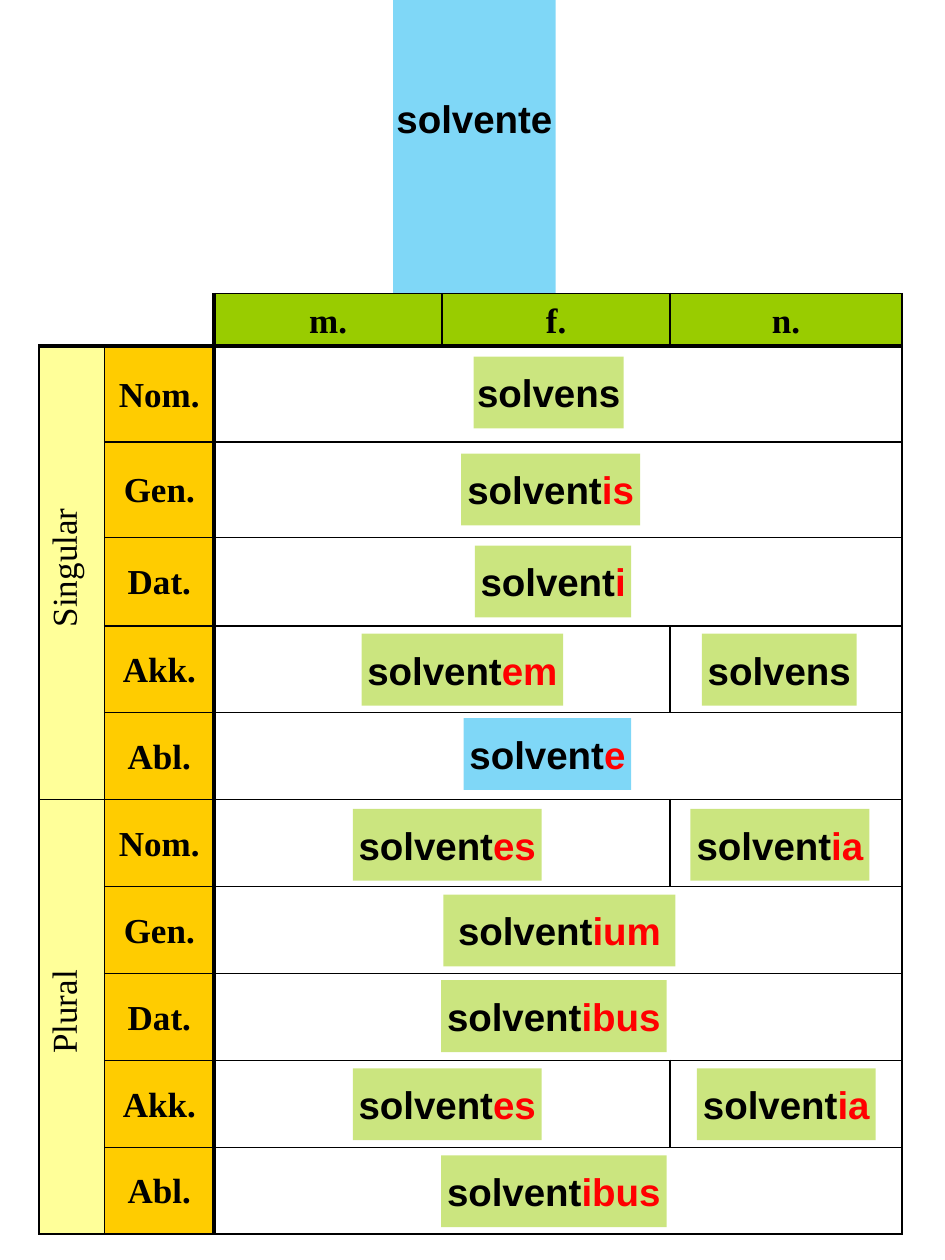
import pptx
import pptx.util
import pptx.dml.color
import pptx.enum.shapes
import pptx.enum.text
import pptx.oxml
import pptx.oxml.ns
from lxml import etree

IN = pptx.util.Inches
qn = pptx.oxml.ns.qn
CENTER = pptx.enum.text.PP_ALIGN.CENTER
MIDDLE = pptx.enum.text.MSO_ANCHOR.MIDDLE
BLUE, GREEN, RED, BLACK = "00B0F0", "99CC00", "FF0000", "000000"


def paint(target, color, alpha=None):
    """Give a fill or a font a solid colour, optionally see-through."""
    fill = target.fill
    fill.solid()
    fill.fore_color.rgb = pptx.dml.color.RGBColor.from_string(color)
    if alpha:
        clr = target._element.spPr.find(qn("a:solidFill"))[0]
        etree.SubElement(clr, qn("a:alpha"), val=str(alpha * 1000))


def write(tf, parts, size, font, bold, line=None):
    """Write (text, colour) parts as one centred paragraph."""
    p = tf.paragraphs[0]
    p.alignment = CENTER
    if line:
        p.line_spacing = line
    for text, color in parts:
        r = p.add_run()
        r.text = text
        for key, value in {"size": pptx.util.Pt(size), "name": font, "bold": bold}.items():
            setattr(r.font, key, value)
        paint(r.font, color)
    return p


prs = pptx.Presentation()
prs.slide_width, prs.slide_height = IN(7.5), IN(10)
s = prs.slides.add_slide(prs.slide_layouts[5])

# Table grid
left, top = 0.31, 2.33
cols = [0.52, 0.87, 1.81, 1.81, 1.84]
rows = [0.4, 0.76, 0.76, 0.7] + [0.69] * 7
frame = s.shapes.add_table(len(rows), len(cols), IN(left), IN(top),
                           IN(sum(cols)), IN(sum(rows)))
tbl = frame.table
tbl.first_row = tbl.horz_banding = False
tbl._tbl.tblPr.find(qn("a:tableStyleId")).text = "{2D5ABB26-0587-4C30-8999-92F81FD0307C}"
for col, width in zip(tbl.columns, cols):
    col.width = IN(width)
for row, height in zip(tbl.rows, rows):
    row.height = IN(height)

# Merged cells: neuter stands apart in Akk. singular, Nom. and Akk. plural
tbl.cell(0, 0).merge(tbl.cell(0, 1))
for r in (1, 6):
    tbl.cell(r, 0).merge(tbl.cell(r + 4, 0))
for r in range(1, 11):
    tbl.cell(r, 2).merge(tbl.cell(r, 3 if r in (4, 6, 9) else 4))

# Labels: (row, column) -> text, fill
labels = {(0, 2 + i): (t, GREEN) for i, t in enumerate(["m.", "f.", "n."])}
labels |= {(1 + i, 1): (t, "FFCC00")
           for i, t in enumerate(["Nom.", "Gen.", "Dat.", "Akk.", "Abl."] * 2)}
labels |= {(1, 0): ("Singular", "FFFF99"), (6, 0): ("Plural", "FFFF99")}

# Borders, fills and label text
for r in range(len(rows)):
    for c in range(len(cols)):
        cell = tbl.cell(r, c)
        if cell.is_spanned:
            continue
        corner = (r, c) == (0, 0)
        heavy = {"L": c == 2, "R": c == 1 or corner, "T": r == 1, "B": r == 0}
        tcPr = cell._tc.get_or_add_tcPr()
        for side in "RB" if corner else "LRTB":
            ln = etree.SubElement(tcPr, qn("a:ln" + side),
                                  w=str(pptx.util.Pt(2.25 if heavy[side] else 1)))
            fill = etree.SubElement(ln, qn("a:solidFill"))
            etree.SubElement(fill, qn("a:srgbClr"), val=BLACK)
        if (r, c) not in labels:
            cell.fill.background()
            continue
        text, color = labels[r, c]
        paint(cell, color)
        for key, value in {"vertical_anchor": MIDDLE, "margin_left": IN(0.06),
                           "margin_right": IN(0.06), "margin_top": IN(0.03),
                           "margin_bottom": IN(0.03)}.items():
            setattr(cell, key, value)
        p = write(cell.text_frame, [(text, BLACK)], 20, "Times New Roman", c > 0, 1.07)
        if c == 0:
            tcPr.set("vert", "vert270")
            p._p.get_or_add_pPr().set("marL", str(IN(0.08)))

# Word boxes: row (None for the title), offset in row, left, width, stem, ending, fill
words = [
    (None, 0.65, 3.12, 1.29, "solvente", "", BLUE),
    (5, 0.06, 3.68, 1.33, "solvent", "e", BLUE),
    (6, 0.09, 2.8, 1.5, "solvent", "es", GREEN),
    (2, 0.11, 3.66, 1.42, "solvent", "is", GREEN),
    (3, 0.08, 3.77, 1.24, "solvent", "i", GREEN),
    (1, 0.1, 3.76, 1.19, "solvens", "", GREEN),
    (4, 0.08, 5.57, 1.23, "solvens", "", GREEN),
    (9, 0.08, 2.8, 1.5, "solvent", "es", GREEN),
    (7, 0.08, 3.52, 1.84, "solvent", "ium", GREEN),
    (4, 0.08, 2.87, 1.6, "solvent", "em", GREEN),
    (6, 0.09, 5.48, 1.42, "solvent", "ia", GREEN),
    (9, 0.08, 5.53, 1.42, "solvent", "ia", GREEN),
    (8, 0.07, 3.5, 1.79, "solvent", "ibus", GREEN),
    (10, 0.08, 3.5, 1.79, "solvent", "ibus", GREEN),
]
for row, dy, x, width, stem, ending, color in words:
    y = dy if row is None else top + sum(rows[:row]) + dy
    box = [IN(v) for v in (x, y, width, 0.57)]
    if row is None:
        sp = s.shapes.title
        sp.left, sp.top, sp.width, sp.height = box
    else:
        sp = s.shapes.add_shape(pptx.enum.shapes.MSO_SHAPE.RECTANGLE, *box)
        sp.shadow.inherit = False
    paint(sp, color, 50)
    sp.line.fill.background()
    tf = sp.text_frame
    for key, value in {"margin_left": IN(0.02), "margin_right": IN(0.02),
                       "margin_top": IN(0.1), "margin_bottom": IN(0.1),
                       "vertical_anchor": MIDDLE, "word_wrap": ending == "ium",
                       "auto_size": pptx.enum.text.MSO_AUTO_SIZE.SHAPE_TO_FIT_TEXT}.items():
        setattr(tf, key, value)
    parts = [(stem, BLACK)] + ([(ending, RED)] if ending else [])
    write(tf, parts, 22, "Arial", True)

prs.save("out.pptx")
